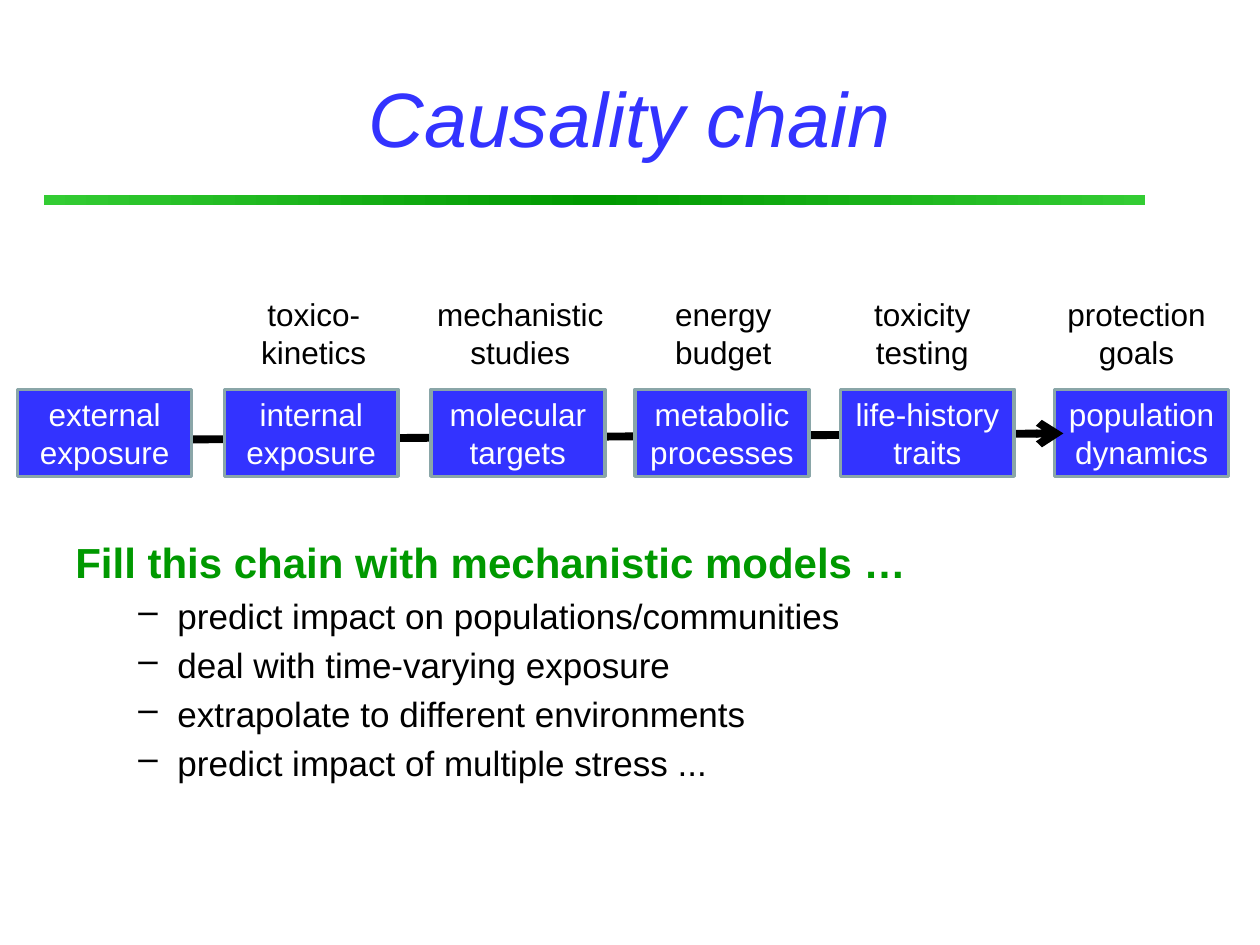
from dataclasses import dataclass

from lxml import etree
from pptx import Presentation
from pptx.dml.color import RGBColor
from pptx.enum.shapes import MSO_CONNECTOR, MSO_SHAPE
from pptx.enum.text import MSO_ANCHOR, PP_ALIGN
from pptx.oxml.ns import qn
from pptx.util import Inches, Pt

RECTANGLE = MSO_SHAPE.RECTANGLE
STRAIGHT = MSO_CONNECTOR.STRAIGHT
TOP, MIDDLE = MSO_ANCHOR.TOP, MSO_ANCHOR.MIDDLE
LEFT, CENTER = PP_ALIGN.LEFT, PP_ALIGN.CENTER


@dataclass(frozen=True)
class Theme:
    font: str = "Arial"
    blue: str = "3333FF"
    green: str = "009900"
    light_green: str = "33CC33"
    border: str = "8AA6A8"
    black: str = "000000"
    white: str = "FFFFFF"
    title_size: int = 44
    heading_size: int = 24
    bullet_size: int = 20
    label_size: int = 18


def color(value):
    return RGBColor.from_string(value)


def write(para, text, *, font, size, ink, bold=False, italic=False, align=LEFT):
    """Add text to a paragraph with its format."""
    para.alignment = align
    span = para.add_run()
    span.text = text
    span.font.name = font
    span.font.size = Pt(size)
    span.font.bold = bold
    span.font.italic = italic
    span.font.color.rgb = color(ink)


def set_list_format(para, margin, indent, bullet=None):
    """Set hanging indent, 20% space before and an optional bullet."""
    properties = para._p.get_or_add_pPr()
    properties.set("marL", str(Inches(margin)))
    properties.set("indent", str(Inches(indent)))
    space = etree.SubElement(properties, qn("a:spcBef"))
    etree.SubElement(space, qn("a:spcPct")).set("val", "20000")
    if bullet:
        etree.SubElement(properties, qn("a:buChar")).set("char", bullet)


class SlideBuilder:
    def __init__(self, page, theme):
        self.page = page
        self.theme = theme

    def text_box(self, left, top, width, height, wrap=True, anchor=TOP):
        box = self.page.shapes.add_textbox(
            Inches(left), Inches(top), Inches(width), Inches(height))
        box.text_frame.word_wrap = wrap
        box.text_frame.vertical_anchor = anchor
        return box.text_frame

    def rectangle(self, left, top, width, height):
        box = self.page.shapes.add_shape(
            RECTANGLE, Inches(left), Inches(top), Inches(width), Inches(height))
        box.shadow.inherit = False
        return box

    def title(self, text):
        frame = self.text_box(0.5, 0.3, 9, 1.25, anchor=MIDDLE)
        write(frame.paragraphs[0], text, font=self.theme.font, italic=True,
              size=self.theme.title_size, ink=self.theme.blue, align=CENTER)

    def gradient_rule(self):
        rule = self.rectangle(0.35, 1.55, 8.74, 0.08)
        rule.line.fill.background()
        rule.fill.gradient()
        rule.fill.gradient_angle = 0
        stops = rule.fill._fill._gradFill.find(qn("a:gsLst"))
        for stop in list(stops):
            stops.remove(stop)
        theme = self.theme
        for position, value in ((0, theme.light_green), (50, theme.green),
                                (100, theme.light_green)):
            stop = etree.SubElement(stops, qn("a:gs"))
            stop.set("pos", str(position * 1000))
            etree.SubElement(stop, qn("a:srgbClr")).set("val", value)

    def link_box(self, left, text):
        box = self.rectangle(left, 3.09, 1.38, 0.69)
        box.fill.solid()
        box.fill.fore_color.rgb = color(self.theme.blue)
        box.line.color.rgb = color(self.theme.border)
        box.line.width = Pt(2)
        frame = box.text_frame
        frame.word_wrap = True
        frame.vertical_anchor = MIDDLE
        write(frame.paragraphs[0], text, font=self.theme.font,
              size=self.theme.label_size, ink=self.theme.white, align=CENTER)

    def label(self, center, width, lines):
        frame = self.text_box(center - width / 2, 2.29, width, 0.71, wrap=False)
        for index, text in enumerate(lines):
            para = frame.add_paragraph() if index else frame.paragraphs[0]
            write(para, text, font=self.theme.font, size=self.theme.label_size,
                  ink=self.theme.black, align=CENTER)

    def arrow(self, start, end):
        arrow = self.page.shapes.add_connector(
            STRAIGHT, *(Inches(value) for value in start + end))
        arrow.line.color.rgb = color(self.theme.black)
        arrow.line.width = Pt(4.5)
        line = arrow.line._get_or_add_ln()
        etree.SubElement(line, qn("a:tailEnd")).set("type", "arrow")
        etree.SubElement(arrow._element.spPr, qn("a:effectLst"))

    def body(self, heading, bullets):
        theme = self.theme
        frame = self.text_box(0.5, 4.21, 9, 2.49)
        para = frame.paragraphs[0]
        write(para, heading, font=theme.font, size=theme.heading_size,
              ink=theme.green, bold=True)
        set_list_format(para, 0.38, -0.38)
        for text in bullets:
            para = frame.add_paragraph()
            para.level = 1
            write(para, text, font=theme.font, size=theme.bullet_size,
                  ink=theme.black)
            set_list_format(para, 0.81, -0.31, bullet="–")


def main():
    deck = Presentation()
    deck.slide_width, deck.slide_height = Inches(10), Inches(7.5)
    page = deck.slides.add_slide(deck.slide_layouts[6])
    slide = SlideBuilder(page, Theme())

    # Header
    slide.gradient_rule()
    slide.title("Causality chain")

    # Chain: the arrow ends over the last box and runs behind the others
    *links, goal = (
        (0.14, "external exposure"),
        (1.78, "internal exposure"),
        (3.42, "molecular targets"),
        (5.04, "metabolic processes"),
        (6.67, "life-history traits"),
        (8.37, "population dynamics"),
    )
    slide.link_box(*goal)
    slide.arrow((1.19, 3.49), (8.44, 3.44))
    for left, text in links:
        slide.link_box(left, text)

    # Research fields above the chain: centre, width, lines
    for center, width, lines in (
        (2.49, 1.04, ("toxico-", "kinetics")),
        (4.13, 1.53, ("mechanistic", "studies")),
        (5.74, 0.97, ("energy", "budget")),
        (7.32, 0.97, ("toxicity", "testing")),
        (9.02, 1.31, ("protection", "goals")),
    ):
        slide.label(center, width, lines)

    # Message
    slide.body("Fill this chain with mechanistic models …", (
        "predict impact on populations/communities",
        "deal with time-varying exposure",
        "extrapolate to different environments",
        "predict impact of multiple stress ...",
    ))

    deck.save("out.pptx")


if __name__ == "__main__":
    main()
